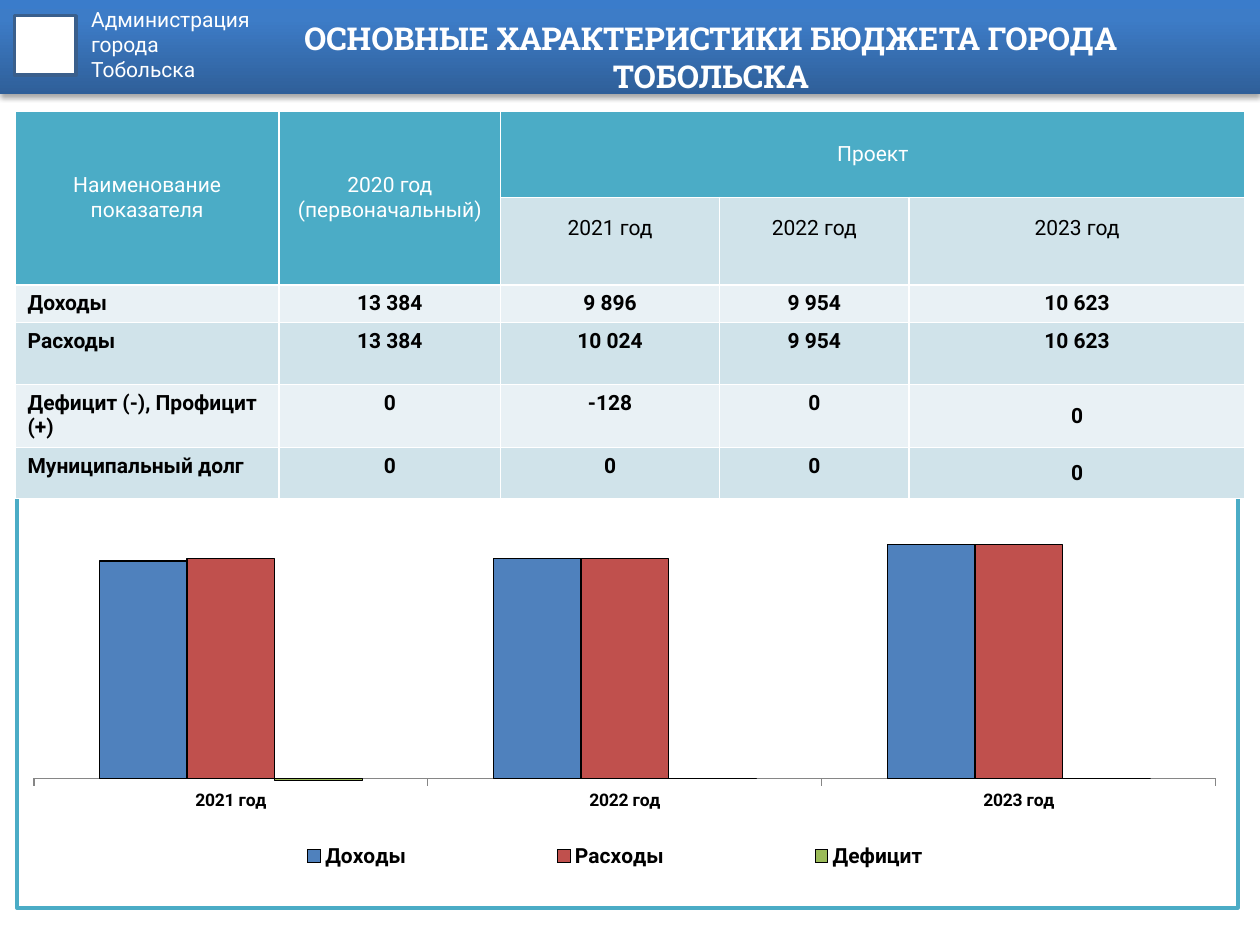
from dataclasses import dataclass

from lxml import etree
from pptx import Presentation
from pptx.chart.data import CategoryChartData
from pptx.dml.color import RGBColor
from pptx.enum.chart import XL_CHART_TYPE, XL_LEGEND_POSITION, XL_TICK_MARK
from pptx.enum.shapes import MSO_SHAPE
from pptx.enum.text import MSO_ANCHOR, PP_ALIGN
from pptx.oxml import parse_xml
from pptx.oxml.ns import nsdecls, qn
from pptx.util import Pt

COLUMN_CLUSTERED = XL_CHART_TYPE.COLUMN_CLUSTERED
LEGEND_RIGHT = XL_LEGEND_POSITION.RIGHT
TICK_NONE, TICK_OUTSIDE = XL_TICK_MARK.NONE, XL_TICK_MARK.OUTSIDE
RECTANGLE = MSO_SHAPE.RECTANGLE
TOP, MIDDLE = MSO_ANCHOR.TOP, MSO_ANCHOR.MIDDLE
LEFT, CENTER = PP_ALIGN.LEFT, PP_ALIGN.CENTER


@dataclass(frozen=True)
class Theme:
    white: RGBColor = RGBColor(0xFF, 0xFF, 0xFF)
    black: RGBColor = RGBColor(0, 0, 0)
    teal: RGBColor = RGBColor(0x4B, 0xAC, 0xC6)
    band_dark: RGBColor = RGBColor(0xD0, 0xE3, 0xEA)
    band_light: RGBColor = RGBColor(0xE9, 0xF1, 0xF5)
    emblem_line: RGBColor = RGBColor(0x3A, 0x5F, 0x8C)
    axis: RGBColor = RGBColor(0x86, 0x86, 0x86)
    series: tuple = (RGBColor(0x4F, 0x81, 0xBD), RGBColor(0xC0, 0x50, 0x4D),
                     RGBColor(0x9B, 0xBB, 0x59))
    header_stops: tuple = ((0, "2F5F99"), (80, "3D7CC7"), (100, "3A7CCB"))
    body_font: str = "Roboto"
    title_font: str = "Roboto Slab"
    title_size: Pt = Pt(18)
    body_size: Pt = Pt(12)
    axis_size: Pt = Pt(10)


theme = Theme()


def style_font(font, color, size=theme.body_size, bold=False, name=theme.body_font):
    font.name, font.size, font.bold = name, size, bold
    font.color.rgb = color


def manual_layout(x, y, width, height, inner=False):
    """Return a c:layout element; values are fractions of the chart frame."""
    target = '<c:layoutTarget val="inner"/>' if inner else ""
    return parse_xml(
        f'<c:layout {nsdecls("c")}><c:manualLayout>{target}'
        '<c:xMode val="edge"/><c:yMode val="edge"/>'
        f'<c:x val="{x}"/><c:y val="{y}"/><c:w val="{width}"/><c:h val="{height}"/>'
        '</c:manualLayout></c:layout>')


presentation = Presentation()
presentation.slide_width, presentation.slide_height = Pt(720), Pt(540)
slide = presentation.slides.add_slide(presentation.slide_layouts[6])
shapes = slide.shapes

# Header band
band = shapes.add_shape(RECTANGLE, 0, 0, Pt(720), Pt(54))
band.line.fill.background()
properties = band._element.spPr
stops = "".join(f'<a:gs pos="{position * 1000}"><a:srgbClr val="{color}"/></a:gs>'
                for position, color in theme.header_stops)
properties.find(qn("a:prstGeom")).addnext(parse_xml(
    f'<a:gradFill {nsdecls("a")} rotWithShape="1"><a:gsLst>{stops}</a:gsLst>'
    '<a:lin ang="16200000" scaled="0"/></a:gradFill>'))
properties.append(parse_xml(
    f'<a:effectLst {nsdecls("a")}><a:outerShdw blurRad="{Pt(3.1)}" dist="{Pt(1.8)}" '
    'dir="5400000" rotWithShape="0"><a:srgbClr val="000000"><a:alpha val="35000"/>'
    '</a:srgbClr></a:outerShdw></a:effectLst>'))

emblem = shapes.add_shape(RECTANGLE, Pt(8.3), Pt(9), Pt(35.3), Pt(33.8))
emblem.shadow.inherit = False
emblem.fill.solid()
emblem.fill.fore_color.rgb = theme.white
emblem.line.color.rgb = theme.emblem_line
emblem.line.width = Pt(2)

office = shapes.add_textbox(Pt(45), 0, Pt(168.5), Pt(65.5)).text_frame
office.word_wrap = True
office.text = "Администрация\nгорода\nТобольска"
for paragraph in office.paragraphs:
    style_font(paragraph.font, theme.white)

title = shapes.add_textbox(Pt(146.2), Pt(10.4), Pt(519.8), Pt(44)).text_frame
title.word_wrap = True
title.vertical_anchor = MIDDLE
title.margin_top = title.margin_bottom = 0
title.text = "ОСНОВНЫЕ ХАРАКТЕРИСТИКИ БЮДЖЕТА ГОРОДА ТОБОЛЬСКА"
title.paragraphs[0].alignment = CENTER
style_font(title.paragraphs[0].font, theme.white, theme.title_size, True, theme.title_font)

# Chart, partly behind the table; values are percent of the 2023 budget
years = ["2021 год", "2022 год", "2023 год"]
chart_data = CategoryChartData()
chart_data.categories = years
chart_data.add_series("Доходы", (93, 94, 100))
chart_data.add_series("Расходы", (94, 94, 100))
chart_data.add_series("Дефицит", (-1, 0, 0))
chart = shapes.add_chart(COLUMN_CLUSTERED, Pt(8.6), Pt(281.5), Pt(699.8), Pt(238.3),
                         chart_data).chart
style_font(chart.font, theme.black, theme.axis_size)
chart.has_title = False
chart.has_legend = True
chart.legend.position = LEGEND_RIGHT
chart.legend.include_in_layout = False
style_font(chart.legend.font, theme.black, bold=True)

plot = chart.plots[0]
plot.gap_width = 150
plot.vary_by_categories = False
for series, color in zip(plot.series, theme.series):
    series.invert_if_negative = False
    series.format.fill.solid()
    series.format.fill.fore_color.rgb = color
    series.format.line.color.rgb = theme.black
    series.format.line.width = Pt(0.75)

value_axis, category_axis = chart.value_axis, chart.category_axis
value_axis.visible = False
value_axis.has_major_gridlines = False
value_axis.minimum_scale, value_axis.maximum_scale = -19, 113
category_axis.major_tick_mark = TICK_OUTSIDE
category_axis.minor_tick_mark = TICK_NONE
category_axis.format.line.color.rgb = theme.axis
style_font(category_axis.tick_labels.font, theme.black, theme.axis_size, True)

chart_space = chart._chartSpace
plot_area = chart_space.find(".//" + qn("c:plotArea"))
legend = chart_space.find(".//" + qn("c:legend"))
for parent in (plot_area, legend):
    for layout in parent.findall(qn("c:layout")):
        parent.remove(layout)
plot_area.insert(0, manual_layout(0.014, 0.048, 0.968, 0.746, inner=True))
legend.find(qn("c:legendPos")).addnext(manual_layout(0.12, 0.83, 0.74, 0.09))
chart_space.find(qn("c:chart")).addnext(parse_xml(
    f'<c:spPr {nsdecls("c", "a")}><a:solidFill><a:srgbClr val="{theme.white}"/></a:solidFill>'
    f'<a:ln w="{Pt(2)}"><a:solidFill><a:srgbClr val="{theme.teal}"/></a:solidFill></a:ln>'
    '</c:spPr>'))

# Budget table
rows = [
    ["Наименование показателя", "2020 год (первоначальный)", "Проект", "", ""],
    ["", "", *years],
    ["Доходы", "13 384", "9 896", "9 954", "10 623"],
    ["Расходы", "13 384", "10 024", "9 954", "10 623"],
    ["Дефицит (-), Профицит (+)", "0", "-128", "0", "0"],
    ["Муниципальный долг", "0", "0", "0", "0"],
]
column_widths = [151, 126.5, 125.2, 108.2, 192.1]
row_heights = [49.3, 50, 21, 35.2, 35.2, 29.2]
table = shapes.add_table(len(rows), len(column_widths), Pt(8.6), Pt(63.5),
                         Pt(sum(column_widths)), Pt(sum(row_heights))).table
for column, width in zip(table.columns, column_widths):
    column.width = Pt(width)
for row, height in zip(table.rows, row_heights):
    row.height = Pt(height)
table.cell(0, 0).merge(table.cell(1, 0))
table.cell(0, 1).merge(table.cell(1, 1))
table.cell(0, 2).merge(table.cell(0, 4))

for row_index, texts in enumerate(rows):
    for column_index, text in enumerate(texts):
        cell = table.cell(row_index, column_index)
        is_data = row_index >= 2
        is_header = row_index == 0 or (row_index == 1 and column_index < 2)
        if text:
            cell.text = text
            paragraph = cell.text_frame.paragraphs[0]
            paragraph.alignment = LEFT if is_data and column_index == 0 else CENTER
            style_font(paragraph.font, theme.white if is_header else theme.black, bold=is_data)
        centred = not is_data or (row_index >= 4 and column_index == 4)
        cell.vertical_anchor = MIDDLE if centred else TOP
        if row_index == 1 and not is_header:
            cell.margin_bottom = Pt(18.5)
        cell_properties = cell._tc.get_or_add_tcPr()
        for side in ("lnL", "lnR", "lnT", "lnB"):
            border = etree.SubElement(cell_properties, qn(f"a:{side}"), w=str(Pt(1)))
            solid = etree.SubElement(border, qn("a:solidFill"))
            etree.SubElement(solid, qn("a:srgbClr"), val=str(theme.white))
        cell.fill.solid()
        band_color = theme.band_dark if row_index % 2 else theme.band_light
        cell.fill.fore_color.rgb = theme.teal if is_header else band_color

presentation.save("out.pptx")
